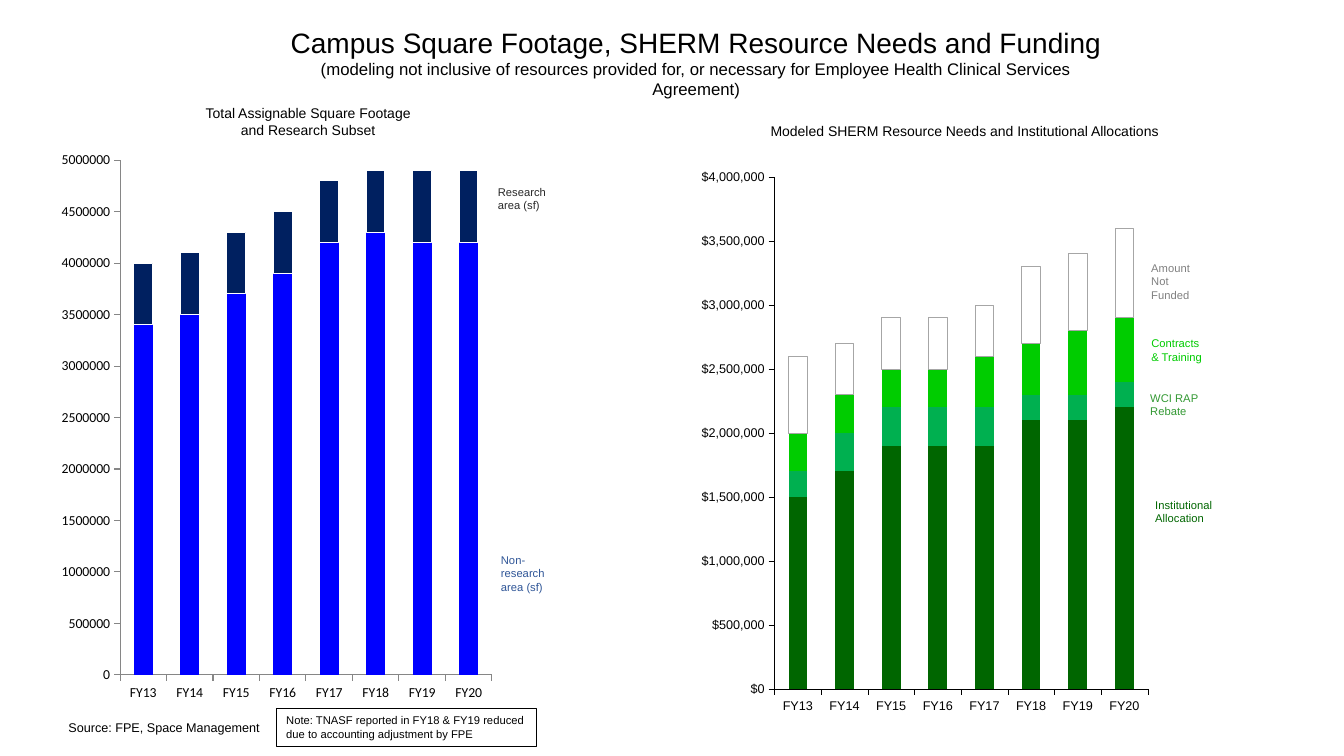
"""Build the campus square footage and resource funding slide."""
import dataclasses
import pptx
import pptx.chart.data
import pptx.dml.color
import pptx.enum.chart
import pptx.enum.shapes
import pptx.enum.text
import pptx.oxml
import pptx.util

SCALE = 9144
YEARS = [f"FY{year}" for year in range(13, 21)]
LEFT = pptx.enum.text.PP_ALIGN.LEFT
MID = pptx.enum.text.PP_ALIGN.CENTER


@dataclasses.dataclass(frozen=True)
class Theme:
    face: str = "Arial"
    plain: str = "Calibri"
    black: str = "000000"
    white: str = "FFFFFF"
    axis: str = "868686"
    edge: str = "A6A6A6"
    gray: str = "808080"
    dark: str = "292929"
    blue: str = "0000FF"
    navy: str = "002060"
    slate: str = "2F5597"
    pine: str = "006600"
    jade: str = "00B050"
    lime: str = "00CC00"
    leaf: str = "339933"
    title: float = 20
    sub: float = 12
    head: float = 10
    tick: float = 9.8
    small: float = 9
    label: float = 8


def px(size):
    return pptx.util.Emu(size * SCALE)


def rgb(code):
    return pptx.dml.color.RGBColor.from_string(code)


class Page:
    def __init__(self, theme, slide):
        self.theme = theme
        self.slide = slide

    def fill_text(self, shape, lines, align, color, inset=10):
        frame = shape.text_frame
        frame.word_wrap = True
        frame.auto_size = pptx.enum.text.MSO_AUTO_SIZE.NONE
        frame.vertical_anchor = pptx.enum.text.MSO_ANCHOR.TOP
        frame.margin_left = frame.margin_right = px(inset)
        frame.margin_top = frame.margin_bottom = px(5)
        for index, (text, size) in enumerate(lines):
            para = frame.add_paragraph() if index else frame.paragraphs[0]
            para.alignment = align
            run = para.add_run()
            run.text = text
            run.font.name = self.theme.face
            run.font.size = pptx.util.Pt(size)
            run.font.color.rgb = rgb(color)

    def title(self, box, lines):
        shape = self.slide.shapes.title
        shape.left, shape.top, shape.width, shape.height = map(px, box)
        self.fill_text(shape, lines, MID, self.theme.black, inset=12)

    def text(self, box, lines, color, align=LEFT):
        shape = self.slide.shapes.add_textbox(*map(px, box))
        self.fill_text(shape, lines, align, color)

    def note(self, box, lines):
        kind = pptx.enum.shapes.MSO_SHAPE.RECTANGLE
        shape = self.slide.shapes.add_shape(kind, *map(px, box))
        shape.shadow.inherit = False
        shape.fill.background()
        shape.line.color.rgb = rgb(self.theme.black)
        shape.line.width = pptx.util.Pt(0.25)
        self.fill_text(shape, lines, LEFT, self.theme.black)

    def place(self, chart, plot):
        area = chart.element.chart.plotArea
        for old in area.xpath("c:layout"):
            area.remove(old)
        spots = "".join(f'<c:{key} val="{val}"/>' for key, val in zip("xywh", plot))
        area.insert(0, pptx.oxml.parse_xml(
            '<c:layout xmlns:c="http://schemas.openxmlformats.org/drawingml/2006/chart">'
            '<c:manualLayout><c:layoutTarget val="inner"/>'
            '<c:xMode val="edge"/><c:yMode val="edge"/>'
            f'{spots}</c:manualLayout></c:layout>'))

    def chart(self, box, plot, rows, top, form, face, size, axis, width):
        data = pptx.chart.data.CategoryChartData()
        data.categories = YEARS
        for name, vals, fill, edge in rows:
            data.add_series(name, [val * 100000 for val in vals])
        kind = pptx.enum.chart.XL_CHART_TYPE.COLUMN_STACKED
        chart = self.slide.shapes.add_chart(kind, *map(px, box), data).chart
        chart.has_legend = chart.has_title = False
        chart.font.name = face
        chart.font.size = pptx.util.Pt(size)
        chart.font.color.rgb = rgb(self.theme.black)
        for part in (chart.category_axis, chart.value_axis):
            part.has_major_gridlines = False
            part.major_tick_mark = pptx.enum.chart.XL_TICK_MARK.OUTSIDE
            part.format.line.color.rgb = rgb(axis)
            part.format.line.width = pptx.util.Pt(width)
        scale = chart.value_axis
        scale.minimum_scale, scale.maximum_scale = 0, top
        scale.major_unit = 500000
        scale.tick_labels.number_format = form
        scale.tick_labels.number_format_is_linked = False
        bars = chart.plots[0]
        bars.gap_width, bars.overlap = 150, 100
        bars.vary_by_categories = False
        for item, (name, vals, fill, edge) in zip(bars.series, rows):
            if fill:
                item.format.fill.solid()
                item.format.fill.fore_color.rgb = rgb(fill)
            else:
                item.format.fill.background()
            if edge:
                item.format.line.color.rgb = rgb(edge[0])
                item.format.line.width = pptx.util.Pt(edge[1])
            else:
                item.format.line.fill.background()
        self.place(chart, plot)


def main():
    deck = pptx.Presentation()
    deck.slide_width, deck.slide_height = px(1333), px(750)
    look = Theme()
    page = Page(look, deck.slides.add_slide(deck.slide_layouts[5]))

    page.title((263, 20, 855, 63), [
        ("Campus Square Footage, SHERM Resource Needs and Funding", look.title),
        ("(modeling not inclusive of resources provided for, or necessary for "
         "Employee Health Clinical Services Agreement)", look.sub)])

    funds = [
        ("Institutional Allocation", [15, 17, 19, 19, 19, 21, 21, 22], look.pine, None),
        ("WCI RAP Rebate", [2, 3, 3, 3, 3, 2, 2, 2], look.jade, None),
        ("Contracts & Training", [3, 3, 3, 3, 4, 4, 5, 5], look.lime, None),
        ("Amount Not Funded", [6, 4, 4, 4, 4, 6, 6, 7], None, (look.edge, 0.54))]
    page.chart((667, 148, 482, 586), (0.21, 0.047, 0.768, 0.867), funds,
               4000000, r"\$#,##0", look.face, look.small, look.black, 0.13)

    space = [
        ("Non-research area (sf)", [34, 35, 37, 39, 42, 43, 42, 42], look.blue, None),
        ("Research area (sf)", [6, 6, 6, 6, 6, 6, 7, 7], look.navy, (look.white, 0.75))]
    page.chart((52, 139, 444, 567), (0.151, 0.035, 0.831, 0.901), space,
               5000000, "General", look.plain, look.tick, look.axis, 0.75)

    page.text((133, 99, 345, 44), [
        ("Total Assignable Square Footage", look.head),
        ("and Research Subset", look.head)], look.black, MID)
    page.text((752, 117, 409, 44), [
        ("Modeled SHERM Resource Needs and Institutional Allocations", look.head)],
        look.black, MID)

    for box, text, color in (
            ((1136, 489, 84, 37), "Institutional Allocation", look.pine),
            ((1132, 254, 67, 51), "Amount Not Funded", look.gray),
            ((1132, 329, 72, 37), "Contracts & Training", look.lime),
            ((1131, 383, 84, 37), "WCI RAP Rebate", look.leaf),
            ((484, 179, 73, 37), "Research area (sf)", look.dark),
            ((487, 544, 67, 51), "Non-research area (sf)", look.slate)):
        page.text(box, [(text, look.label)], color)

    page.text((58, 709, 212, 25), [("Source: FPE, Space Management", look.small)],
              look.black)
    page.note((274, 703, 258, 37), [
        ("Note: TNASF reported in FY18 & FY19 reduced due to accounting "
         "adjustment by FPE", look.label)])
    deck.save("out.pptx")


if __name__ == "__main__":
    main()
